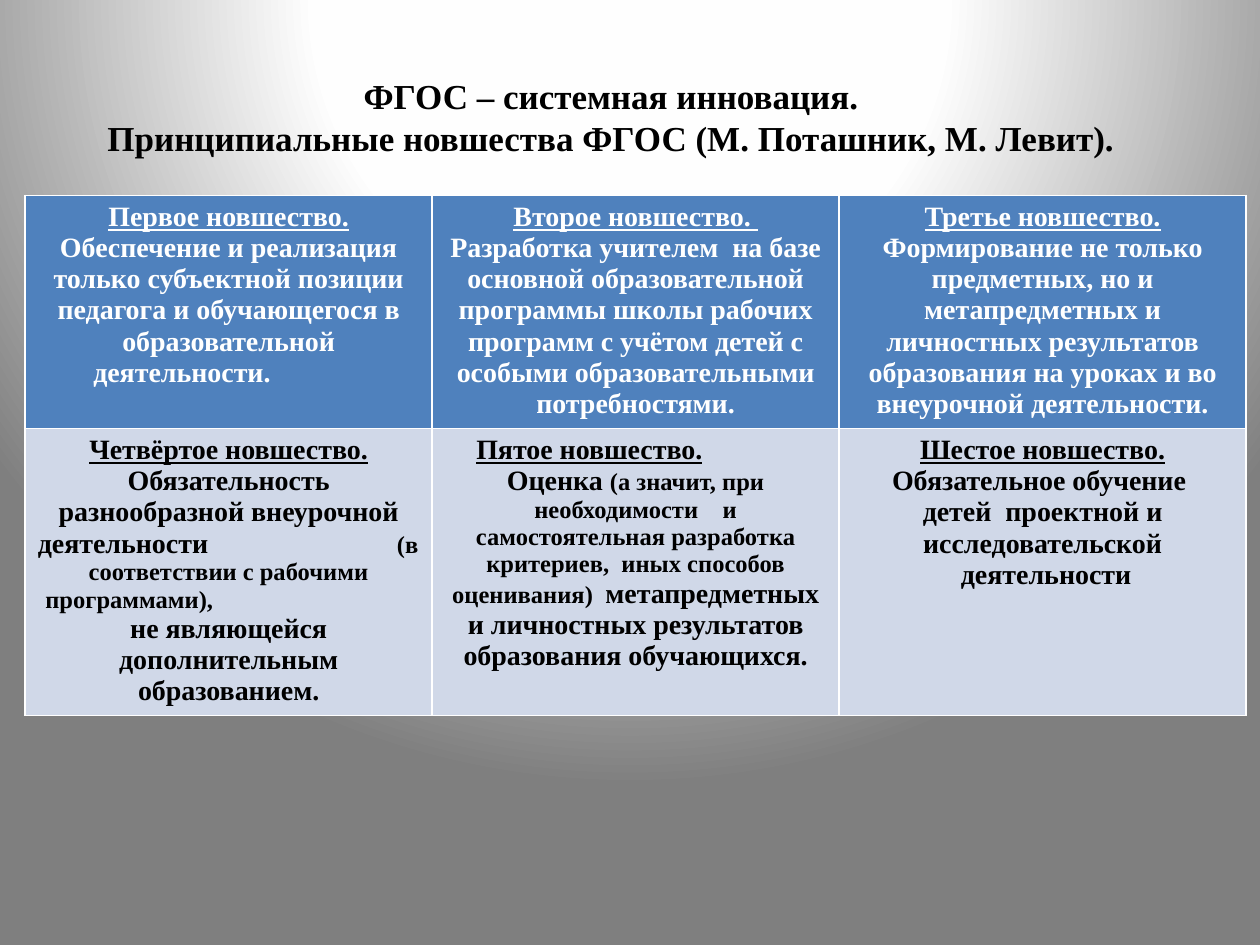
from lxml.etree import SubElement
from pptx import Presentation
from pptx.dml.color import RGBColor
from pptx.enum.text import MSO_ANCHOR, PP_ALIGN
from pptx.oxml import parse_xml
from pptx.oxml.ns import nsdecls, qn
from pptx.util import Inches, Pt

FONT = "Times New Roman"
COLORS = {"head": "4F81BD", "body": "D0D8E8", "light": "FFFFFF", "dark": "000000",
          "glow": "FEFEFE", "edge": "7F7F7F"}
STOPS = [(0, "light"), (40, "glow"), (100, "edge")]
TITLE = ["ФГОС – системная инновация.",
         "Принципиальные новшества ФГОС (М. Поташник, М. Левит)."]


def line(*runs, indent=None, tab=None):
    """Describe a paragraph; it is centred unless it has an indent."""
    return {"runs": runs, "indent": indent, "tab": tab}


def heading(text, **layout):
    """Describe an underlined heading paragraph."""
    return line((text, 16, True), **layout)


def plain(text, size=16, **layout):
    """Describe a paragraph of one run without underline."""
    return line((text, size, False), **layout)


ROWS = [
    [
        [heading("Первое новшество."),
         plain("Обеспечение и реализация только субъектной позиции педагога "
               "и обучающегося в образовательной"),
         plain("деятельности.", indent=0.44)],
        [heading("Второе новшество. "),
         plain("Разработка учителем  на базе основной образовательной программы школы "
               "рабочих программ с учётом детей с особыми образовательными потребностями.")],
        [heading("Третье новшество."),
         plain("Формирование не только предметных, но и метапредметных и личностных "
               "результатов образования на уроках и во внеурочной деятельности.")],
    ],
    [
        [heading("Четвёртое новшество."),
         plain("Обязательность разнообразной внеурочной"),
         line(("деятельности\t", 16, False), ("(в", 14, False), indent=0, tab=(3.02, "r")),
         plain("соответствии с рабочими", 14),
         plain("программами),", 14, indent=0.06),
         plain("не являющейся дополнительным образованием.")],
        [heading("Пятое новшество.\t", indent=0.25, tab=(2.77, "l")),
         line(("Оценка ", 16, False),
              ("(а значит, при необходимости    и самостоятельная разработка критериев,  "
               "иных способов оценивания)  ", 14, False),
              ("метапредметных и личностных результатов образования обучающихся.", 16, False))],
        [heading("Шестое новшество."),
         plain("Обязательное обучение "),
         plain("детей  проектной и исследовательской"),
         plain(" деятельности")],
    ],
]


def paint_background(page):
    """Fill the page with a round gradient that glows from above."""
    stops = "".join(f'<a:gs pos="{pos * 1000}"><a:srgbClr val="{COLORS[name]}"/></a:gs>'
                    for pos, name in STOPS)
    page.background.fill.solid()
    properties = page.background._cSld.bg.bgPr
    properties.replace(properties[0], parse_xml(
        f'<a:gradFill {nsdecls("a")} rotWithShape="1"><a:gsLst>{stops}</a:gsLst>'
        '<a:path path="circle"><a:fillToRect l="50000" t="-80000" r="50000" b="180000"/>'
        '</a:path></a:gradFill>'))


def add_span(para, text, size, color, underline=False):
    """Add one bold run to a paragraph."""
    span = para.add_run()
    span.text = text
    font = span.font
    font.name, font.size, font.bold, font.underline = FONT, Pt(size), True, underline
    font.color.rgb = RGBColor.from_string(COLORS[color])


def add_title(page, left, top, width, height):
    """Place the two-line title in its placeholder."""
    box = page.shapes.title
    box.left, box.top, box.width, box.height = map(Inches, (left, top, width, height))
    frame = box.text_frame
    frame.word_wrap = True
    frame.vertical_anchor = MSO_ANCHOR.MIDDLE
    para = frame.paragraphs[0]
    para.alignment = PP_ALIGN.CENTER
    for index, text in enumerate(TITLE):
        if index:
            para.add_line_break()
        add_span(para, text, 20, "dark")


def lay_out(para, indent, tab):
    """Centre a paragraph, or indent it from the left with an optional tab stop."""
    para.alignment = PP_ALIGN.CENTER if indent is None else PP_ALIGN.LEFT
    properties = para._p.get_or_add_pPr()
    if indent:
        properties.set("marL", str(Inches(indent)))
    if tab:
        position, side = tab
        stops = SubElement(properties, qn("a:tabLst"))
        SubElement(stops, qn("a:tab"), pos=str(Inches(position)), algn=side)


def fill_cell(cell, lines, fill, color):
    """Write the paragraphs of one cell and colour it."""
    cell.fill.solid()
    cell.fill.fore_color.rgb = RGBColor.from_string(COLORS[fill])
    frame = cell.text_frame
    for index, item in enumerate(lines):
        para = frame.add_paragraph() if index else frame.paragraphs[0]
        lay_out(para, item["indent"], item["tab"])
        for text, size, underline in item["runs"]:
            add_span(para, text, size, color, underline)


def add_innovations(page, left, top, width, heights):
    """Place the table of six innovations."""
    table = page.shapes.add_table(len(ROWS), len(ROWS[0]), Inches(left), Inches(top),
                                  Inches(width), Inches(sum(heights))).table
    looks = [("head", "light"), ("body", "dark")]
    for row, height, texts, look in zip(table.rows, heights, ROWS, looks):
        row.height = Inches(height)
        for cell, lines in zip(row.cells, texts):
            fill_cell(cell, lines, *look)


def main():
    """Build the slide and save the deck."""
    deck = Presentation()
    deck.slide_width, deck.slide_height = Inches(10), Inches(7.5)
    page = deck.slides.add_slide(deck.slide_layouts[5])
    paint_background(page)
    add_title(page, 0.2, 0.3, 9.3, 1.25)
    add_innovations(page, 0.2, 1.55, 9.69, [1.85, 2.28])
    deck.save("out.pptx")


if __name__ == "__main__":
    main()
